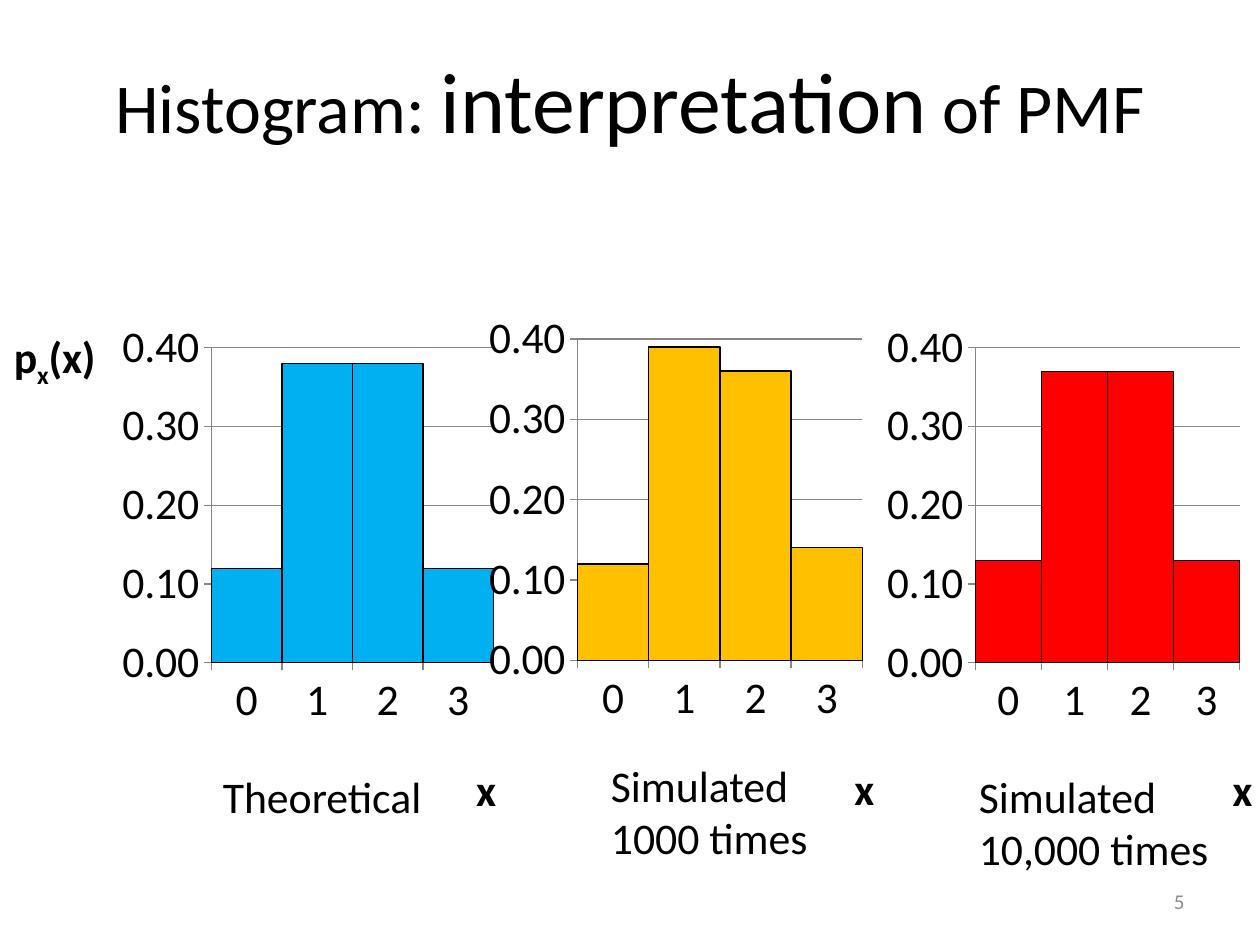
from lxml.etree import SubElement
from pptx import Presentation
from pptx.chart.data import CategoryChartData
from pptx.dml.color import RGBColor
from pptx.enum.chart import XL_CHART_TYPE, XL_TICK_MARK
from pptx.enum.text import MSO_ANCHOR, MSO_AUTO_SIZE, PP_ALIGN
from pptx.oxml.ns import qn
from pptx.util import Inches, Pt

BLACK = RGBColor(0x00, 0x00, 0x00)
GRAY = RGBColor(0x8C, 0x8C, 0x8C)
AXIS_GRAY = RGBColor(0x86, 0x86, 0x86)
BLUE = RGBColor(0x00, 0xB0, 0xF0)
GOLD = RGBColor(0xFF, 0xC0, 0x00)
RED = RGBColor(0xFF, 0x00, 0x00)


def format_font(font, size, color=BLACK, bold=False):
    values = {"name": "Calibri", "size": Pt(size), "bold": bold}
    for name, value in values.items():
        setattr(font, name, value)
    font.color.rgb = color


def place_in_chart(element, shares):
    layout = element.find(qn("c:layout"))
    if layout is None:
        layout = element.makeelement(qn("c:layout"))
        element.insert(0, layout)
    manual = SubElement(layout, qn("c:manualLayout"))
    if "w" in shares:
        SubElement(manual, qn("c:layoutTarget")).set("val", "inner")
    for mode in ("xMode", "yMode"):
        SubElement(manual, qn(f"c:{mode}")).set("val", "edge")
    for name, share in shares.items():
        SubElement(manual, qn(f"c:{name}")).set("val", str(share))


presentation = Presentation()
presentation.slide_width = Inches(10)
presentation.slide_height = Inches(7.5)
column = presentation.slide_width / 100
row = presentation.slide_height / 100
slide = presentation.slides.add_slide(presentation.slide_layouts[5])

title = slide.shapes.title
box = {"left": 5 * column, "top": 3.3 * row, "width": 90 * column, "height": 14.4 * row}
for name, value in box.items():
    setattr(title, name, int(value))
title.text_frame.auto_size = MSO_AUTO_SIZE.NONE
title.text_frame.vertical_anchor = MSO_ANCHOR.MIDDLE
paragraph = title.text_frame.paragraphs[0]
paragraph.alignment = PP_ALIGN.CENTER
for text, size in (("Histogram: ", 40), ("interpretation", 49), (" of PMF", 40)):
    run = paragraph.add_run()
    run.text = text
    format_font(run.font, size)

histograms = [
    (BLUE, (0.12, 0.38, 0.38, 0.12), (0, 32.9, 40, 55.6),
     {"x": 0.42, "y": 0.07, "w": 0.56, "h": 0.6}, 0.93),
    (GOLD, (0.12, 0.39, 0.36, 0.14), (38.3, 31.9, 31.7, 56.7),
     {"x": 0.24, "y": 0.07, "w": 0.72, "h": 0.6}, 0.92),
    (RED, (0.13, 0.37, 0.37, 0.13), (70, 32.9, 30, 55.6),
     {"x": 0.25, "y": 0.07, "w": 0.71, "h": 0.6}, 0.92),
]
for color, probabilities, (left, top, width, height), plot_shares, title_left in histograms:
    data = CategoryChartData(number_format="0.00")
    data.categories = ["0", "1", "2", "3"]
    data.add_series("Series 1", probabilities)
    chart = slide.shapes.add_chart(
        XL_CHART_TYPE.COLUMN_CLUSTERED, int(left * column), int(top * row),
        int(width * column), int(height * row), data).chart
    format_font(chart.font, 10)
    chart.has_legend = False
    chart.has_title = False
    plot = chart.plots[0]
    plot.gap_width = 0
    plot.vary_by_categories = False
    bars = plot.series[0].format
    bars.fill.solid()
    bars.fill.fore_color.rgb = color
    bars.line.color.rgb = BLACK
    bars.line.width = Pt(0.75)

    value_format = {"minimum_scale": 0, "maximum_scale": 0.4, "major_unit": 0.1,
                    "has_major_gridlines": True}
    for name, value in value_format.items():
        setattr(chart.value_axis, name, value)
    chart.value_axis.tick_labels.number_format = "#,##0.00"
    chart.value_axis.tick_labels.number_format_is_linked = False
    for axis in (chart.category_axis, chart.value_axis):
        axis.major_tick_mark = XL_TICK_MARK.OUTSIDE
        axis.minor_tick_mark = XL_TICK_MARK.NONE
        format_font(axis.tick_labels.font, 25)
    for part in (chart.category_axis, chart.value_axis, chart.value_axis.major_gridlines):
        part.format.line.color.rgb = AXIS_GRAY
        part.format.line.width = Pt(0.75)

    axis_titles = [(chart.category_axis, ("x",), {"x": title_left, "y": 0.84})]
    if color == BLUE:
        axis_titles.append((chart.value_axis, ("p", "x", "(x)"), {"x": 0.02, "y": 0.03}))
    for axis, texts, shares in axis_titles:
        axis_title = axis.axis_title
        frame = axis_title.text_frame
        frame._txBody.bodyPr.set("rot", "0")
        frame._txBody.bodyPr.set("vert", "horz")
        for position, text in enumerate(texts):
            run = frame.paragraphs[0].add_run()
            run.text = text
            format_font(run.font, 25, bold=True)
            if position == 1:
                run.font._element.set("baseline", "-25000")
        place_in_chart(axis_title._element, shares)
    place_in_chart(chart._chartSpace.chart.plotArea, plot_shares)

labels = [
    ("Theoretical", (16.7, 80.8, 18, 6.9), 25, BLACK, PP_ALIGN.LEFT),
    ("Simulated\n1000 times", (47.5, 79.6, 17.8, 12.5), 25, BLACK, PP_ALIGN.LEFT),
    ("Simulated\n10,000 times", (76.7, 80.8, 20.4, 12.5), 25, BLACK, PP_ALIGN.LEFT),
    ("5", (71.7, 92.7, 23.3, 5.3), 12, GRAY, PP_ALIGN.RIGHT),
]
for text, (left, top, width, height), size, color, alignment in labels:
    label = slide.shapes.add_textbox(
        int(left * column), int(top * row), int(width * column), int(height * row))
    frame = label.text_frame
    frame.text = text
    frame.word_wrap = color == GRAY
    frame.vertical_anchor = MSO_ANCHOR.MIDDLE if color == GRAY else MSO_ANCHOR.TOP
    for paragraph in frame.paragraphs:
        paragraph.alignment = alignment
        format_font(paragraph.runs[0].font, size, color)

presentation.save("out.pptx")
